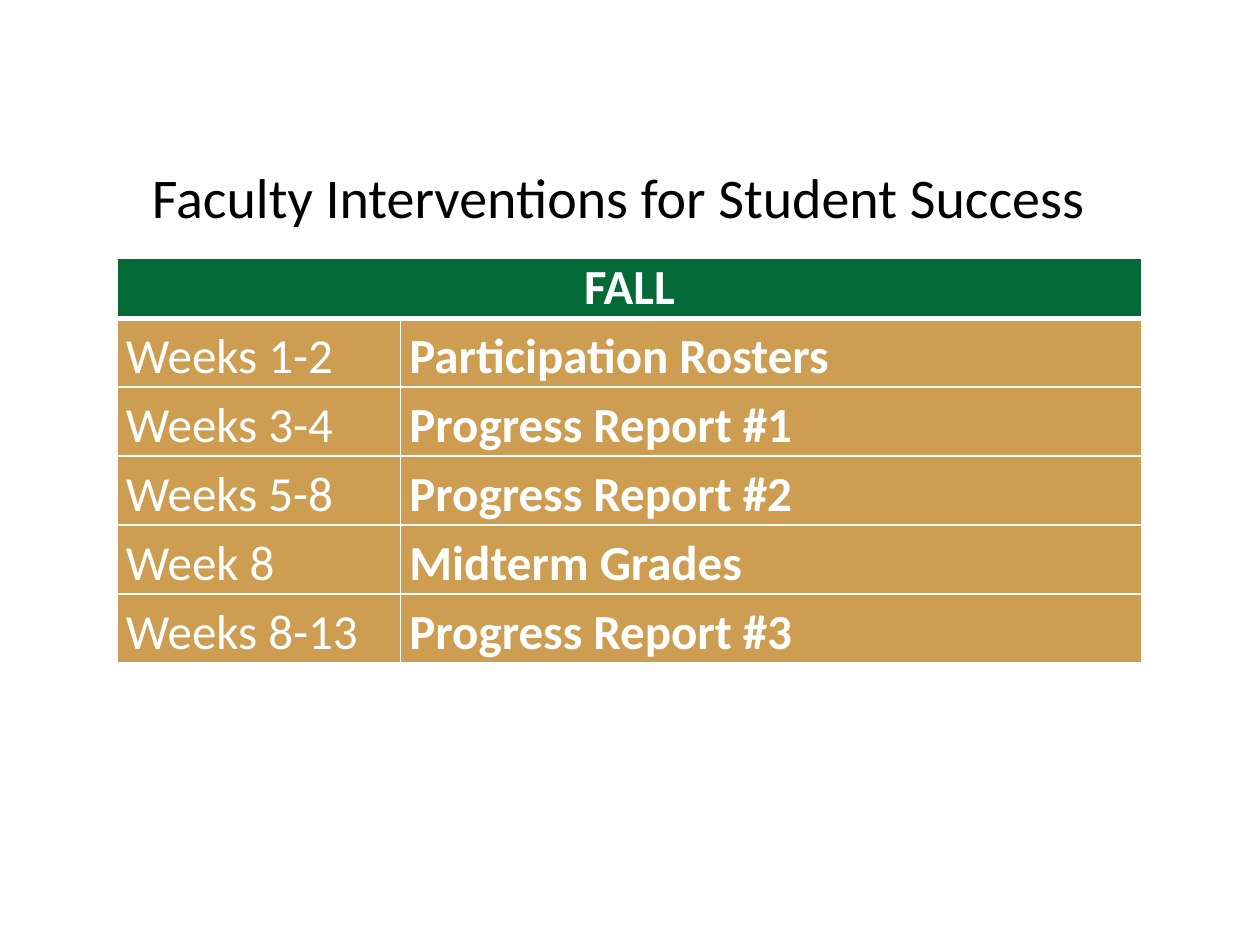
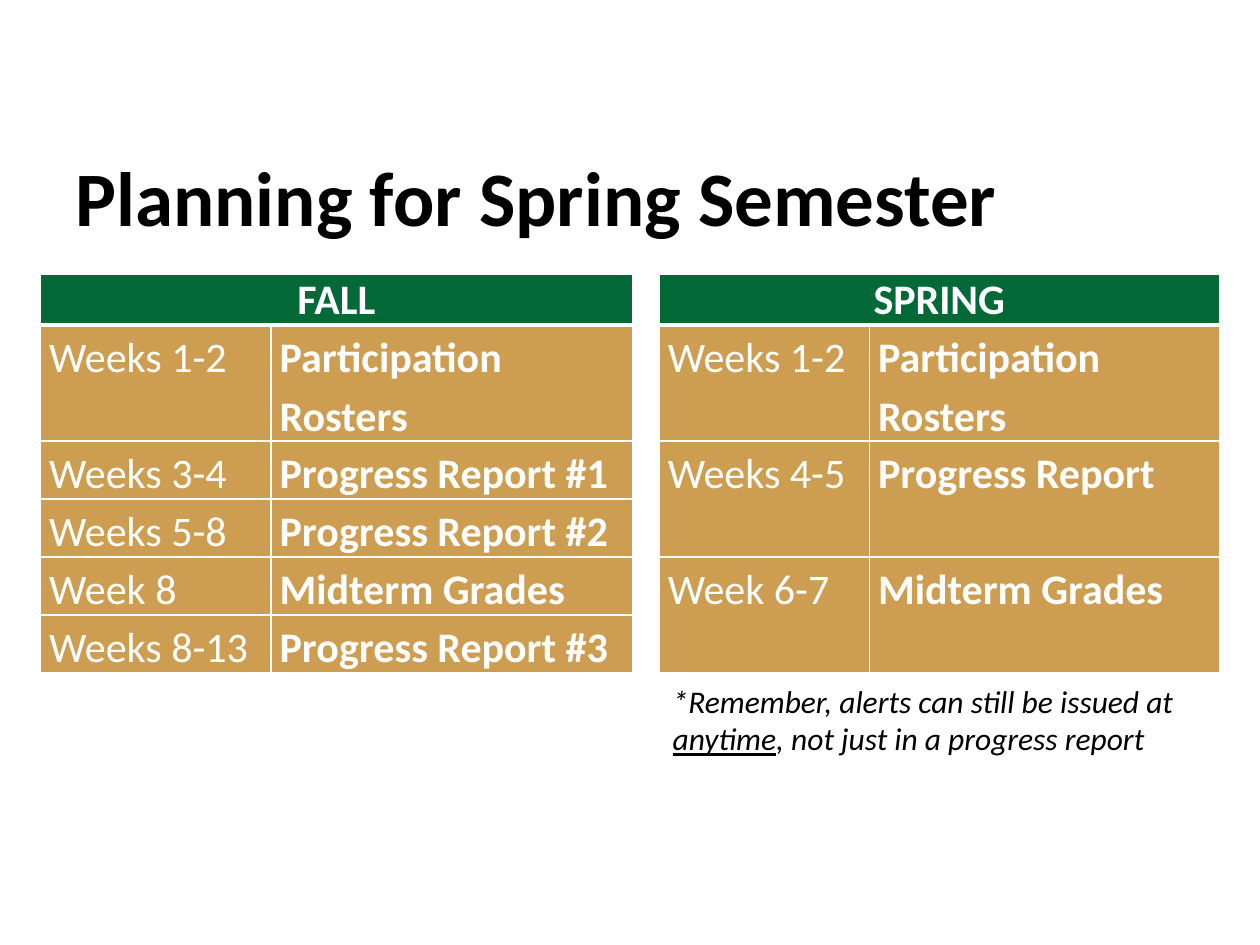
import pptx
import pptx.dml.color
import pptx.enum.text
import pptx.oxml
import pptx.oxml.ns
import pptx.util
from pptx.util import Inches

# Shared look
FONT = "Calibri"
GREEN = pptx.dml.color.RGBColor(0x02, 0x69, 0x37)
GOLD = pptx.dml.color.RGBColor(0xCD, 0x9E, 0x52)
WHITE = pptx.dml.color.RGBColor(0xFF, 0xFF, 0xFF)
BLACK = pptx.dml.color.RGBColor(0x00, 0x00, 0x00)
ALIGN = pptx.enum.text.PP_ALIGN
ANCHOR = pptx.enum.text.MSO_ANCHOR
AUTO_SIZE = pptx.enum.text.MSO_AUTO_SIZE
TITLE_ONLY = 5
TITLE_TOP, TITLE_HEIGHT = 0.93, 1.25
LINE_WIDTH, HEADER_LINE_WIDTH = 1, 3
CELL_INSETS = {
    "margin_left": Inches(0.07), "margin_right": Inches(0.07),
    "margin_top": 0, "margin_bottom": 0,
}

# Term schedules
FALL = [
    ("Weeks 1-2", "Participation Rosters"),
    ("Weeks 3-4", "Progress Report #1"),
    ("Weeks 5-8", "Progress Report #2"),
    ("Week 8", "Midterm Grades"),
    ("Weeks 8-13", "Progress Report #3"),
]
SPRING = [
    ("Weeks 1-2", "Participation Rosters"),
    ("Weeks 4-5", "Progress Report"),
    ("Week 6-7", "Midterm Grades"),
]


def apply(target, values):
    for name, value in values.items():
        setattr(target, name, value)


def add_span(para, text, size, color, **styles):
    span = para.add_run()
    span.text = text
    apply(span.font, {"name": FONT, "size": pptx.util.Pt(size), **styles})
    span.font.color.rgb = color


def add_page(deck, heading, left, width, size, align, bold):
    """Add a page with its heading in the title placeholder."""
    page = deck.slides.add_slide(deck.slide_layouts[TITLE_ONLY])
    title = page.shapes.title
    apply(title, {
        "left": Inches(left), "top": Inches(TITLE_TOP),
        "width": Inches(width), "height": Inches(TITLE_HEIGHT),
    })
    frame = title.text_frame
    apply(frame, {"word_wrap": True, "auto_size": AUTO_SIZE.NONE,
                  "vertical_anchor": ANCHOR.MIDDLE})
    para = frame.paragraphs[0]
    para.alignment = align
    add_span(para, heading, size, BLACK, bold=bold)
    return page


def set_borders(cell, top, bottom):
    properties = cell._tc.get_or_add_tcPr()
    widths = {"L": LINE_WIDTH, "R": LINE_WIDTH, "T": top, "B": bottom}
    for side, width in widths.items():
        properties.append(pptx.oxml.parse_xml(
            f'<a:ln{side} {pptx.oxml.ns.nsdecls("a")} w="{pptx.util.Pt(width)}">'
            f'<a:solidFill><a:srgbClr val="{WHITE}"/></a:solidFill></a:ln{side}>'
        ))


def format_cell(cell, fill, top, bottom):
    apply(cell, CELL_INSETS)
    set_borders(cell, top, bottom)
    cell.fill.solid()
    cell.fill.fore_color.rgb = fill


def add_schedule(page, term, entries, box, week_width, heights, size):
    """Place a term table; heights lists the header row, then the entries."""
    left, top, width = box
    table = page.shapes.add_table(
        len(entries) + 1, 2, Inches(left), Inches(top),
        Inches(width), Inches(sum(heights)),
    ).table
    table.horz_banding = False
    table.columns[0].width = Inches(week_width)
    table.columns[1].width = Inches(width - week_width)
    for row, height in zip(table.rows, heights):
        row.height = Inches(height)

    # Header across both columns
    for column in range(2):
        format_cell(table.cell(0, column), GREEN, LINE_WIDTH, HEADER_LINE_WIDTH)
    header = table.cell(0, 0)
    header.merge(table.cell(0, 1))
    para = header.text_frame.paragraphs[0]
    para.alignment = ALIGN.CENTER
    add_span(para, term, size, WHITE, bold=True)

    # Weeks and their tasks
    for row, entry in enumerate(entries, start=1):
        line_above = HEADER_LINE_WIDTH if row == 1 else LINE_WIDTH
        for column, text in enumerate(entry):
            cell = table.cell(row, column)
            format_cell(cell, GOLD, line_above, LINE_WIDTH)
            para = cell.text_frame.paragraphs[0]
            para.line_spacing = 1.15
            add_span(para, text, size, WHITE, bold=column == 1)


def add_reminder(page, left, top, width, height):
    box = page.shapes.add_textbox(*map(Inches, (left, top, width, height)))
    box.text_frame.word_wrap = True
    para = box.text_frame.paragraphs[0]
    for text, underline in [
        ("*Remember, alerts can still be issued at ", False),
        ("anytime", True),
        (", not just in a progress report", False),
    ]:
        add_span(para, text, 18, BLACK, italic=True, underline=underline)


def build_interventions(deck):
    page = add_page(deck, "Faculty Interventions for Student Success",
                    0.32, 9.18, 32, ALIGN.CENTER, False)
    heights = [0.47] + [0.54] * len(FALL)
    add_schedule(page, "FALL", FALL, (0.93, 2.05, 8.13), 2.25, heights, 28)


def build_planning(deck):
    page = add_page(deck, "Planning for Spring Semester",
                    0.5, 9, 44, ALIGN.LEFT, True)
    top, header, line = 2.18, 0.4, 0.46
    add_reminder(page, 5.24, 5.36, 4.45, 0.71)
    fall_heights = [header, 2 * line] + [line] * (len(FALL) - 1)
    add_schedule(page, "FALL", FALL, (0.32, top, 4.7), 1.83, fall_heights, 24)
    spring_heights = [header] + [2 * line] * len(SPRING)
    add_schedule(page, "SPRING", SPRING, (5.23, top, 4.45), 1.67,
                 spring_heights, 24)


def main():
    deck = pptx.Presentation()
    apply(deck, {"slide_width": Inches(10), "slide_height": Inches(7.5)})
    build_interventions(deck)
    build_planning(deck)
    deck.save("out.pptx")


if __name__ == "__main__":
    main()
